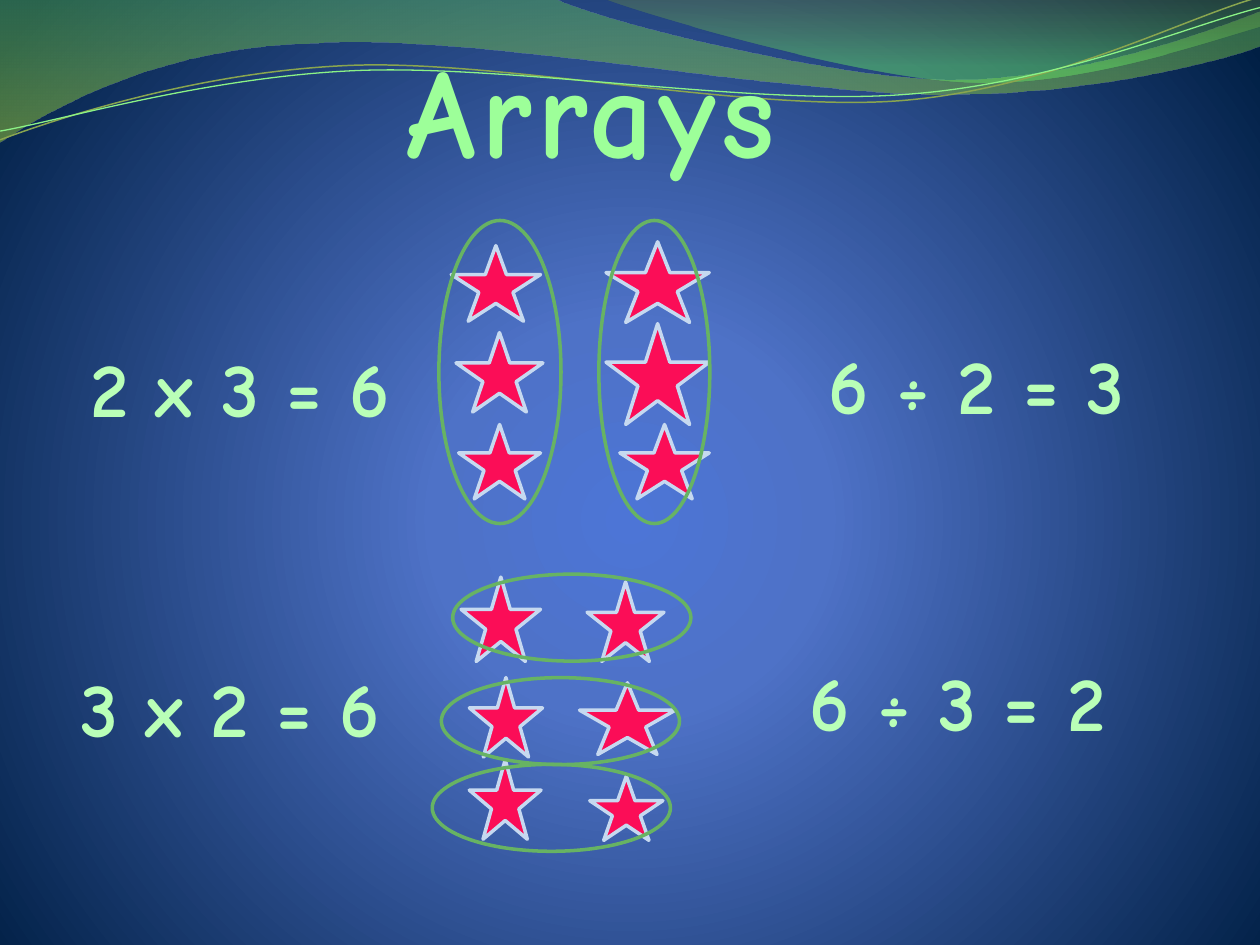
"""Build the Arrays slide: star arrays, grouping rings and matching equations."""
from math import cos, radians, sin

from lxml import etree
from pptx import Presentation
from pptx.dml.color import RGBColor
from pptx.enum.shapes import MSO_SHAPE
from pptx.enum.text import MSO_AUTO_SIZE, PP_ALIGN
from pptx.oxml.ns import qn
from pptx.util import Pt

STAR, RING = MSO_SHAPE.STAR_5_POINT, MSO_SHAPE.OVAL
CENTER, GROW = PP_ALIGN.CENTER, MSO_AUTO_SIZE.SHAPE_TO_FIT_TEXT
FONT = "Comic Neue"

BACKDROP = [(0, "4D75D6", 100), (25, "4E72C7", 100), (100, "001F44", 100)]
BACKDROP_CENTER = {"l": 10, "t": 110, "r": 10, "b": 100}

WAVES = [
    ([(0, 0), (316.8, -0.7), (342.7, 12.2, 478.1, 45.4, 545.8, 45.4),
      (614.2, 45.4, 689.8, 18.7, 720, 6.5), (720.7, 25.9),
      (707.8, 31.7, 626.4, 54.7, 537.1, 54), (447.8, 54, 275, 20.2, 185, 24.5),
      (92.9, 25.9, 33.1, 59.8, -0.7, 81.4), (0, 0)],
     [(0, "60BB5B", 45), (100, "95C238", 55)]),
    ([(344.9, -0.7), (366.5, 7.9, 491, 44.6, 553.7, 46.8),
      (616.3, 49.7, 691.9, 23, 720, 15.1), (720, 0), (344.9, -0.7)],
     [(0, "769537", 30), (80, "69E963", 45)]),
]
STRAND_TILT = 2.7
STRAND_PIVOT = (359.4, 42)
STRANDS = [
    ([(0, 79.9), (34.6, 67, 113.8, 41, 199.4, 37.4),
      (284.4, 33.8, 427, 64.1, 513.4, 57.6), (599.8, 51.1, 675.4, 10.8, 718.6, -1.4)],
     "89A54F", 0.85),
    ([(0, 74.9), (33.8, 69.1, 118.1, 43.9, 203.8, 40.3),
      (290.2, 36.7, 429.8, 60.5, 516.2, 54), (601.9, 48.2, 677.5, 15.1, 720, 4.3)],
     "8BF286", 0.75),
]

STARS = [
    (257.8, 140.4, 51.1, 43.2), (346.3, 138.2, 59, 46.1),
    (260.6, 190.1, 49.7, 45.4), (346.3, 185, 59, 57.6),
    (262.1, 242.6, 46.8, 42.5), (354.2, 242.6, 51.1, 42.5),
    (263.5, 329.8, 45.4, 48.2), (268.2, 434.2, 41, 45.4),
    (268.2, 387.2, 41.8, 45.4), (335.5, 332.6, 43.9, 45.4),
    (337, 443.5, 41.8, 36.7), (331.2, 390.2, 54.7, 41),
]
COLUMN_TOP, COLUMN_HEIGHT = 126, 173.2
COLUMN_RINGS = [(250.8, 69.8), (342.2, 63.4)]
ROW_SIZE = (136.1, 49.7)
ROW_RINGS = [(258.7, 328.1), (252.2, 387.2), (247, 436.8)]

TITLE = ("Arrays", (202, 15.1, 271.4, 94.3))
EQUATION_SIZE = (227, 60.5)
EQUATIONS = [
    ("2 x 3 = 6", (23.8, 190.8)), ("6 ÷ 2 = 3", (444.8, 189.4)),
    ("3 x 2 = 6", (18, 373.7)), ("6 ÷ 3 = 2", (433.8, 370.4)),
]
TITLE_STYLE = {"size": Pt(72), "bold": True, "name": FONT}
TITLE_INK = [(10, "9DFF99", 100), (75, "55C74F", 100)]
TITLE_EDGE = ("F6FEF6", 0.9)
EQUATION_STYLE = {"size": Pt(44), "bold": True, "name": FONT}
EQUATION_INK = [(10, "B9FFB7", 100), (90, "67B363", 100)]
EQUATION_EDGE = ("FCFFFC", 1.4)
FRAME_STYLE = {"word_wrap": False, "auto_size": GROW}


def color(hex_text):
    return RGBColor.from_string(hex_text)


def apply(target, values):
    for attribute, value in values.items():
        setattr(target, attribute, value)


def add_gradient(fill, owner, stops, center=None):
    fill.gradient()
    gradient = owner.find(".//" + qn("a:gradFill"))
    for child in list(gradient):
        gradient.remove(child)
    stop_list = etree.SubElement(gradient, qn("a:gsLst"))
    for position, hex_text, opacity in stops:
        stop = etree.SubElement(stop_list, qn("a:gs"), pos=str(position * 1000))
        tint = etree.SubElement(stop, qn("a:srgbClr"), val=hex_text)
        if opacity < 100:
            etree.SubElement(tint, qn("a:alpha"), val=str(opacity * 1000))
    if center:
        radial = etree.SubElement(gradient, qn("a:path"), path="circle")
        edges = {side: str(share * 1000) for side, share in center.items()}
        etree.SubElement(radial, qn("a:fillToRect"), **edges)
    else:
        etree.SubElement(gradient, qn("a:lin"), ang="5400000", scaled="0")


def pairs(node):
    return list(zip(node[::2], node[1::2]))


def turn(node, angle):
    px, py = STRAND_PIVOT
    c, s = cos(radians(angle)), sin(radians(angle))
    turned = []
    for x, y in pairs(node):
        dx, dy = x - px, y - py
        turned += [px + dx * c - dy * s, py + dx * s + dy * c]
    return tuple(turned)


def add_curve(slide, nodes, close):
    start, *ends = [(Pt(node[-2]), Pt(node[-1])) for node in nodes]
    builder = slide.shapes.build_freeform(*start)
    builder.add_line_segments(ends, close=close)
    curve = builder.convert_to_shape()
    curve.shadow.inherit = False
    segments = list(curve.element.iter(qn("a:lnTo")))
    for segment, node in zip(segments, nodes[1:]):
        if len(node) == 6:
            bend = etree.Element(qn("a:cubicBezTo"))
            for x, y in pairs(node):
                etree.SubElement(bend, qn("a:pt"), x=str(Pt(x) - curve.left),
                                 y=str(Pt(y) - curve.top))
            segment.getparent().replace(segment, bend)
    return curve


def set_line(shape, hex_text, width):
    shape.line.color.rgb = color(hex_text)
    shape.line.width = Pt(width)


def add_figure(slide, kind, box, line, fill=None):
    figure = slide.shapes.add_shape(kind, *map(Pt, box))
    figure.shadow.inherit = False
    set_line(figure, line, 2)
    if fill:
        figure.fill.solid()
        figure.fill.fore_color.rgb = color(fill)
    else:
        figure.fill.background()


def add_words(slide, words, box, style, ink, edge):
    frame = slide.shapes.add_textbox(*map(Pt, box)).text_frame
    apply(frame, FRAME_STYLE)
    paragraph = frame.paragraphs[0]
    paragraph.alignment = CENTER
    run = paragraph.add_run()
    run.text = words
    apply(run.font, style)
    properties = run.font._element
    add_gradient(run.font.fill, properties, ink)
    edge_color, edge_width = edge
    outline = etree.Element(qn("a:ln"), w=str(Pt(edge_width)))
    solid = etree.SubElement(outline, qn("a:solidFill"))
    etree.SubElement(solid, qn("a:srgbClr"), val=edge_color)
    properties.insert(0, outline)
    return run


def main():
    deck = Presentation()
    apply(deck, {"slide_width": Pt(720), "slide_height": Pt(540)})
    slide = deck.slides.add_slide(deck.slide_layouts[6])
    add_gradient(slide.background.fill, slide.element, BACKDROP, BACKDROP_CENTER)

    for nodes, stops in WAVES:
        wave = add_curve(slide, nodes, True)
        wave.line.fill.background()
        add_gradient(wave.fill, wave.element, stops)
    for nodes, hex_text, width in STRANDS:
        strand = add_curve(slide, [turn(node, STRAND_TILT) for node in nodes], False)
        strand.rotation = -STRAND_TILT
        strand.fill.background()
        set_line(strand, hex_text, width)

    for box in STARS:
        add_figure(slide, STAR, box, "C6D9F0", "FB0D57")
    title = add_words(slide, *TITLE, TITLE_STYLE, TITLE_INK, TITLE_EDGE)
    title.font._element.set("spc", "300")

    rings = [(left, COLUMN_TOP, width, COLUMN_HEIGHT) for left, width in COLUMN_RINGS]
    rings += [corner + ROW_SIZE for corner in ROW_RINGS]
    for box in rings:
        add_figure(slide, RING, box, "67B363")
    for words, corner in EQUATIONS:
        add_words(slide, words, corner + EQUATION_SIZE, EQUATION_STYLE,
                  EQUATION_INK, EQUATION_EDGE)
    deck.save("out.pptx")


if __name__ == "__main__":
    main()
